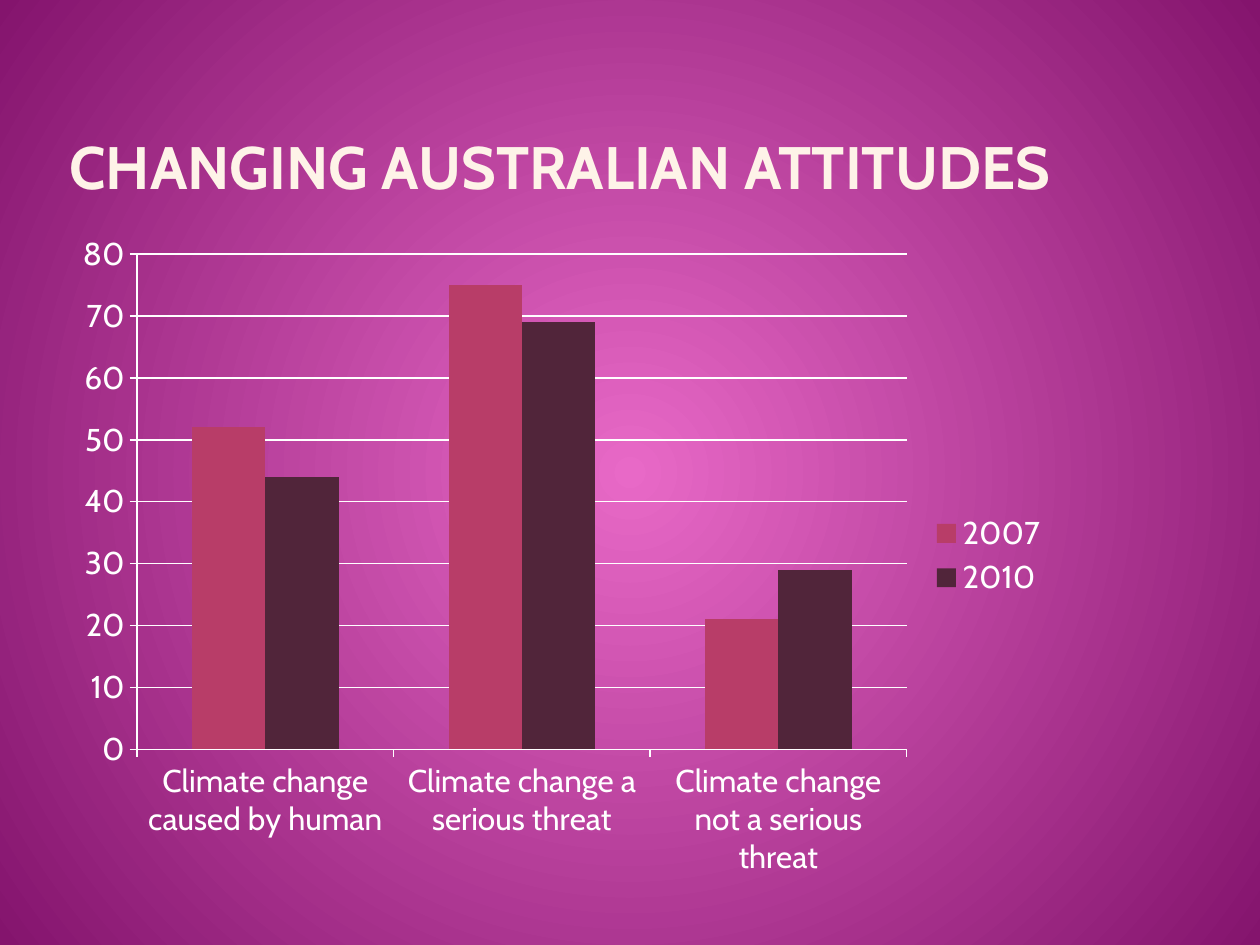
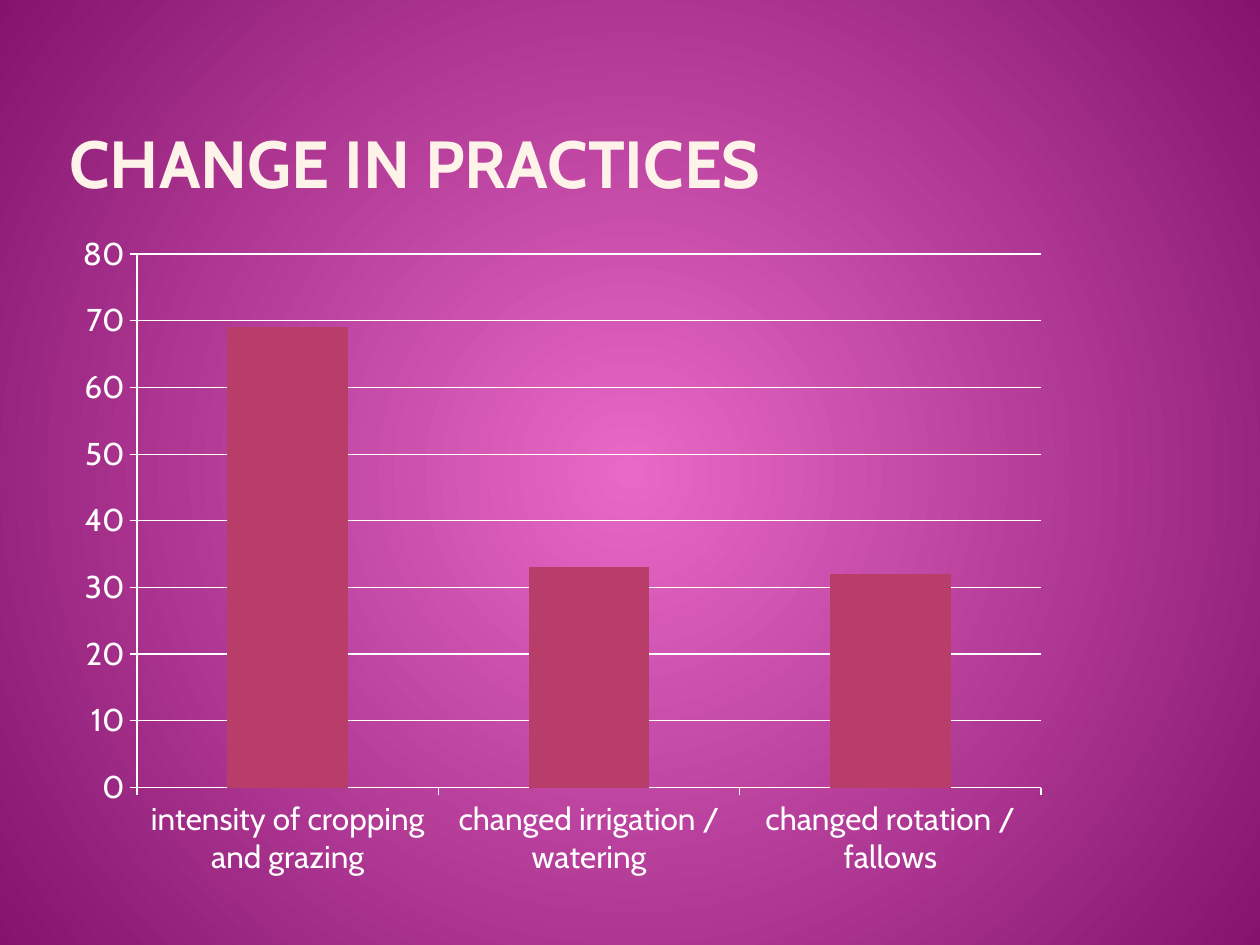
"""Build two slides of survey column charts on a shared radial background."""
from dataclasses import dataclass

from pptx import Presentation
from pptx.chart.data import CategoryChartData
from pptx.dml.color import RGBColor
from pptx.enum.chart import XL_CHART_TYPE, XL_LEGEND_POSITION, XL_TICK_MARK
from pptx.enum.text import MSO_ANCHOR
from pptx.oxml import parse_xml
from pptx.oxml.ns import nsdecls, qn
from pptx.util import Inches, Pt

DECK = [
    {
        "title": "CHANGING AUSTRALIAN ATTITUDES",
        "size": 34.2,
        "cats": [
            "Climate change caused by human",
            "Climate change a serious threat",
            "Climate change not a serious threat",
        ],
        "data": {"2007": (52, 75, 21), "2010": (44, 69, 29)},
    },
    {
        "title": "CHANGE IN PRACTICES",
        "size": 38,
        "cats": [
            "intensity of cropping and grazing",
            "changed irrigation / watering",
            "changed rotation / fallows",
        ],
        "data": {"Series 1": (69, 33, 32)},
    },
]


@dataclass(frozen=True)
class Theme:
    font: str = "Cabin"
    body: float = 18
    rule: float = 0.75
    head: str = "FEF3E8"
    ink: str = "FFFFFF"
    glow: tuple = ("E869C7", "84146D")
    bars: tuple = ("B83D68", "51253A")


THEME = Theme()
LEFT, WIDE = 0.5, 7.92
TITLE = [Inches(n) for n in (LEFT, 0.35, WIDE, 1.25)]
CHART = [Inches(n) for n in (LEFT, 1.76, WIDE, 5.3)]
FRAME = {
    "word_wrap": True,
    "vertical_anchor": MSO_ANCHOR.BOTTOM,
    "margin_left": Inches(0.05),
    "margin_right": Inches(0.05),
    "margin_top": 0,
    "margin_bottom": 0,
}
PLOT = {"gap_width": 150, "overlap": 0, "vary_by_categories": False}
SCALE = {
    "minimum_scale": 0,
    "maximum_scale": 80,
    "major_unit": 10,
    "has_major_gridlines": True,
}
TICKS = {"major_tick_mark": XL_TICK_MARK.OUTSIDE, "minor_tick_mark": XL_TICK_MARK.NONE}
LEGEND = {"position": XL_LEGEND_POSITION.RIGHT, "include_in_layout": False}


def apply(part, look):
    for name, value in look.items():
        setattr(part, name, value)


def style(font, size, tone, bold=False):
    apply(font, {"name": THEME.font, "size": Pt(size), "bold": bold})
    font.color.rgb = RGBColor.from_string(tone)


def stroke(line):
    line.width = Pt(THEME.rule)
    line.color.rgb = RGBColor.from_string(THEME.ink)


def paint(slide):
    fill = slide.background.fill
    fill.gradient()
    for stop, tone in zip(fill.gradient_stops, THEME.glow):
        stop.color.rgb = RGBColor.from_string(tone)
    for lin in list(slide.element.iter(qn("a:lin"))):
        lin.getparent().replace(lin, parse_xml(
            f'<a:path {nsdecls("a")} path="circle">'
            '<a:fillToRect l="50000" t="50000" r="50000" b="50000"/></a:path>'))


def add_title(slide, text, size):
    frame = slide.shapes.add_textbox(*TITLE).text_frame
    apply(frame, FRAME)
    run = frame.paragraphs[0].add_run()
    run.text = text
    style(run.font, size, THEME.head, True)


def add_bars(slide, cats, data):
    source = CategoryChartData()
    source.categories = cats
    for name, values in data.items():
        source.add_series(name, values)
    chart = slide.shapes.add_chart(
        XL_CHART_TYPE.COLUMN_CLUSTERED, *CHART, source).chart
    apply(chart, {"has_title": False, "has_legend": len(data) > 1})
    style(chart.font, THEME.body, THEME.ink)
    if chart.has_legend:
        apply(chart.legend, LEGEND)
    plot = chart.plots[0]
    apply(plot, PLOT)
    for series, tone in zip(plot.series, THEME.bars):
        series.format.fill.solid()
        series.format.fill.fore_color.rgb = RGBColor.from_string(tone)
    apply(chart.value_axis, SCALE)
    stroke(chart.value_axis.major_gridlines.format.line)
    for axis in (chart.category_axis, chart.value_axis):
        apply(axis, TICKS)
        stroke(axis.format.line)


def main():
    deck = Presentation()
    apply(deck, {"slide_width": Inches(10), "slide_height": Inches(7.5)})
    for page in DECK:
        slide = deck.slides.add_slide(deck.slide_layouts[6])
        paint(slide)
        add_title(slide, page["title"], page["size"])
        add_bars(slide, page["cats"], page["data"])
    deck.save("out.pptx")


if __name__ == "__main__":
    main()
